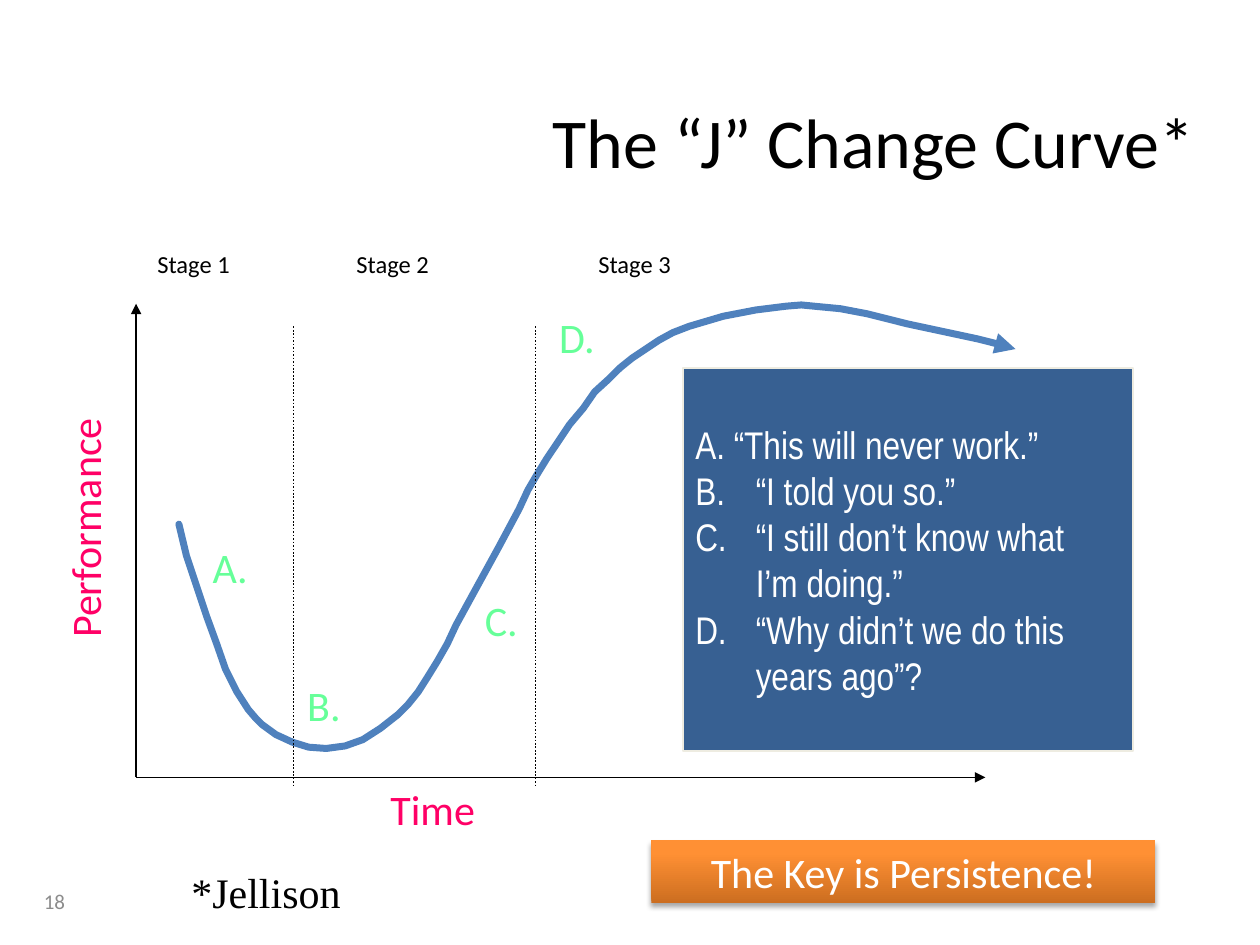
"""Build the "J" change curve slide."""
from lxml import etree
from pptx import Presentation, util as u
from pptx.dml.color import RGBColor
from pptx.enum import dml, shapes, text
from pptx.oxml.ns import qn

BLACK, WHITE, PINK, GREEN = "000000", "FFFFFF", "FF0066", "66FF99"
TITLE = "The “J” Change Curve*"
QUOTES = [
    "A. “This will never work.”",
    "B.\t“I told you so.”",
    "C.\t“I still don’t know what\vI’m doing.”",
    "D.\t“Why didn’t we do this\vyears ago”?",
]
STAGES = [("Stage 1", 1.15), ("Stage 2", 2.73), ("Stage 3", 4.65)]
MARKERS = [("A.", 1.59, 4.25), ("B.", 2.34, 5.34), ("C.", 3.75, 4.67), ("D.", 4.34, 2.42)]
DIVIDERS = [2.33, 4.25]
ORIGIN, TIME_END, PERFORMANCE_END = (1.08, 6.17), (7.82, 6.17), (1.08, 2.41)
CURVE = [
    (1.42, 4.16), (1.48, 4.41), (1.56, 4.65), (1.64, 4.89), (1.72, 5.11), (1.79, 5.31),
    (1.88, 5.49), (1.97, 5.63), (2.03, 5.7), (2.08, 5.75), (2.19, 5.83), (2.32, 5.89),
    (2.45, 5.93), (2.59, 5.94), (2.74, 5.92), (2.88, 5.87), (3.02, 5.78), (3.16, 5.67),
    (3.24, 5.59), (3.32, 5.49), (3.39, 5.38), (3.47, 5.25), (3.55, 5.11), (3.62, 4.96),
    (3.79, 4.65), (3.96, 4.34), (4.12, 4.04), (4.19, 3.89), (4.26, 3.77), (4.34, 3.64),
    (4.4, 3.55), (4.52, 3.37), (4.63, 3.24), (4.72, 3.11), (4.83, 3.01), (4.92, 2.92),
    (5.02, 2.84), (5.23, 2.7), (5.34, 2.64), (5.47, 2.59), (5.74, 2.51), (6, 2.46),
    (6.24, 2.43), (6.36, 2.42), (6.46, 2.43), (6.67, 2.45), (6.88, 2.49), (7.08, 2.54),
    (7.2, 2.57), (7.34, 2.6), (7.62, 2.66), (7.76, 2.69), (7.88, 2.72), (7.99, 2.75),
    (8.06, 2.77),
]


def rgb(color):
    return RGBColor.from_string(color)


def sub(parent, tag, **attrs):
    return etree.SubElement(parent, qn(tag), attrs)


def write(s, lines, size=24, color=BLACK, font="Calibri", align="LEFT", anchor="TOP", hang=None, tab=None):
    tf = s.text_frame
    tf.word_wrap = True
    tf.vertical_anchor = getattr(text.MSO_ANCHOR, anchor)
    for i, line in enumerate([lines] if isinstance(lines, str) else lines):
        p = tf.add_paragraph() if i else tf.paragraphs[0]
        p.text = line
        p.alignment = getattr(text.PP_ALIGN, align)
        if hang:
            pPr = p._p.get_or_add_pPr()
            pPr.set("marL", str(u.Inches(hang)))
            pPr.set("indent", str(-u.Inches(hang)))
            sub(sub(pPr, "a:tabLst"), "a:tab", pos=str(u.Inches(tab)), algn="l")
        for r in p.runs:
            r.font.size, r.font.name = u.Pt(size), font
            r.font.color.rgb = rgb(color)


def label(s, words, x, y, w, h=0.5, rotation=0, **fmt):
    box = s.shapes.add_textbox(*map(u.Inches, (x, y, w, h)))
    box.rotation = rotation
    write(box, words, **fmt)


def stroke(sp, color, width, arrow=False):
    sp.line.color.rgb = rgb(color)
    sp.line.width = u.Pt(width)
    if arrow:
        sub(sp._element.spPr.find(qn("a:ln")), "a:tailEnd", type="triangle")


def line(s, start, end, arrow=False, dash=None):
    c = s.shapes.add_connector(shapes.MSO_CONNECTOR.STRAIGHT, *map(u.Inches, start + end))
    c.line.dash_style = dash
    stroke(c, BLACK, 1, arrow)
    sub(c._element.spPr, "a:effectLst")


def rectangle(s, x, y, w, h):
    sp = s.shapes.add_shape(shapes.MSO_SHAPE.RECTANGLE, *map(u.Inches, (x, y, w, h)))
    sp.shadow.inherit = False
    return sp


def draw_curve(s):
    points = [(u.Inches(x), u.Inches(y)) for x, y in CURVE]
    builder = s.shapes.build_freeform(*points[0])
    builder.add_line_segments(points[1:], close=False)
    sp = builder.convert_to_shape()
    sp.shadow.inherit = False
    sp.fill.background()
    stroke(sp, "4F81BD", 4, arrow=True)
    sp._element.spPr.find(qn("a:ln")).set("cap", "rnd")


def draw_quotes(s):
    sp = rectangle(s, 5.42, 2.92, 3.57, 3.04)
    sp.fill.solid()
    sp.fill.fore_color.rgb = rgb("376092")
    stroke(sp, "EEECE1", 1)
    write(sp, QUOTES, size=22, color=WHITE, font="Arial Narrow", anchor="MIDDLE", hang=0.48, tab=0.38)


def draw_key(s):
    sp = rectangle(s, 5.17, 6.67, 4, 0.5)
    sp.fill.gradient()
    sp.fill.gradient_angle = 90
    for stop, (position, color) in zip(sp.fill.gradient_stops, [(0, "CC6E20"), (0.8, "FF9034")]):
        stop.position, stop.color.rgb = position, rgb(color)
    sp.line.fill.background()
    shadow = sub(sp._element.spPr.find(qn("a:effectLst")), "a:outerShdw", blurRad=str(u.Pt(3.1)),
                 dist=str(u.Pt(1.8)), dir="5400000", rotWithShape="0")
    sub(sub(shadow, "a:srgbClr", val=BLACK), "a:alpha", val="35000")
    write(sp, "The Key is Persistence!", color=WHITE, align="CENTER")


def main():
    prs = Presentation()
    prs.slide_width, prs.slide_height = u.Inches(10), u.Inches(7.5)
    s = prs.slides.add_slide(prs.slide_layouts[5])
    title = s.shapes.title
    title.left, title.top, title.width, title.height = map(u.Inches, (0.25, 0.25, 9.33, 1.25))
    write(title, TITLE, size=40, align="RIGHT", anchor="BOTTOM")

    line(s, ORIGIN, PERFORMANCE_END, arrow=True)
    label(s, "Time", 3, 6.17, 0.98, color=PINK)
    label(s, "Performance", -0.45, 3.79, 2.24, rotation=270, color=PINK)
    draw_curve(s)
    line(s, ORIGIN, TIME_END, arrow=True)
    for words, x, y in MARKERS:
        label(s, words, x, y, 0.6, color=GREEN)
    draw_quotes(s)
    for x in DIVIDERS:
        line(s, (x, 2.59), (x, 6.24), dash=dml.MSO_LINE.ROUND_DOT)
    for words, x in STAGES:
        label(s, words, x, 1.93, 0.89, 0.33, size=14)
    label(s, "*Jellison", 1.42, 6.83, 2.42, font="Times New Roman")
    label(s, "18", 0.25, 6.95, 2.33, 0.4, size=12, color="8C8C8C", anchor="MIDDLE")
    draw_key(s)
    prs.save("out.pptx")


if __name__ == "__main__":
    main()
